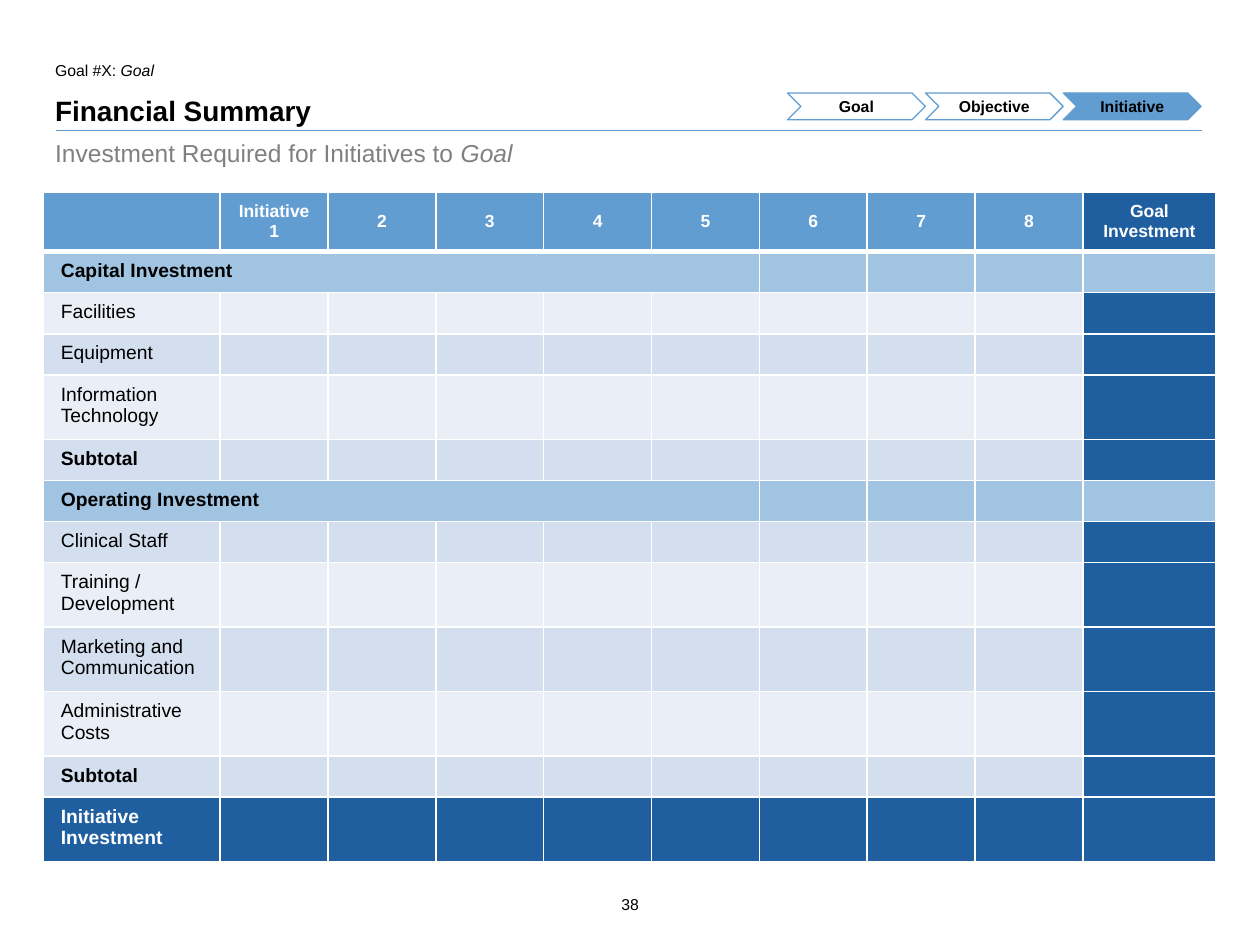
from dataclasses import dataclass

from lxml.etree import SubElement
from pptx import Presentation
from pptx.dml.color import RGBColor
from pptx.enum.shapes import MSO_CONNECTOR, MSO_SHAPE
from pptx.enum.text import MSO_ANCHOR, PP_ALIGN
from pptx.oxml.ns import qn
from pptx.util import Pt


@dataclass(frozen=True)
class Theme:
    font: str = "Arial"
    black: str = "000000"
    white: str = "FFFFFF"
    gray: str = "808080"
    rule: str = "5D9ACF"
    header: str = "629DD1"
    total: str = "1F5FA0"
    section: str = "A1C4E3"
    light_band: str = "EAEFF7"
    dark_band: str = "D3DFEE"
    small: float = 9
    table_header: float = 10
    table_body: float = 11
    subtitle: float = 14
    title: float = 16


theme = Theme()


def write(text_frame, parts, size, color, bold=False, align=PP_ALIGN.LEFT):
    """Fill one paragraph from parts; every second part is italic."""
    paragraph = text_frame.paragraphs[0]
    paragraph.alignment = align
    for index, part in enumerate(parts):
        run = paragraph.add_run()
        run.text = part
        run.font.name = theme.font
        run.font.size = Pt(size)
        run.font.color.rgb = RGBColor.from_string(color)
        run.font.bold = bold
        run.font.italic = index % 2 == 1


def set_borders(cell, widths):
    """Draw white borders; widths maps an edge tag to points."""
    properties = cell._tc.get_or_add_tcPr()
    for position, (edge, width) in enumerate(widths.items()):
        line = properties.makeelement(qn(f"a:{edge}"), {"w": str(Pt(width))})
        fill = SubElement(line, qn("a:solidFill"))
        SubElement(fill, qn("a:srgbClr"), val=theme.white)
        properties.insert(position, line)


presentation = Presentation()
presentation.slide_width = Pt(720)
presentation.slide_height = Pt(540)
slide = presentation.slides.add_slide(presentation.slide_layouts[6])

# Headings and page number
rule = slide.shapes.add_connector(MSO_CONNECTOR.STRAIGHT, Pt(32), Pt(74.6), Pt(687), Pt(74.6))
rule.line.color.rgb = RGBColor.from_string(theme.rule)
rule.line.width = Pt(0.75)
SubElement(rule._element.spPr, qn("a:effectLst"))

left, center = PP_ALIGN.LEFT, PP_ALIGN.CENTER
top, bottom = MSO_ANCHOR.TOP, MSO_ANCHOR.BOTTOM
texts = [
    (["Goal #X: ", "Goal"], (31.5, 31.7, 208, 14.4), theme.small, theme.black, False, left, top, 3),
    (["Financial Summary"], (31.5, 53.3, 654.5, 19.4), theme.title, theme.black, True, left, bottom, 0),
    (["Investment Required for Initiatives to ", "Goal"], (31.5, 75.6, 654.5, 21.6),
     theme.subtitle, theme.gray, False, left, top, 3),
    (["38"], (335.5, 508.3, 49, 18.7), theme.small, theme.black, False, center, top, 3),
]
for parts, box, size, color, bold, align, anchor, inset in texts:
    text_frame = slide.shapes.add_textbox(*map(Pt, box)).text_frame
    text_frame.word_wrap = True
    text_frame.vertical_anchor = anchor
    text_frame.margin_left = text_frame.margin_right = 0
    text_frame.margin_top = text_frame.margin_bottom = Pt(inset)
    write(text_frame, parts, size, color, bold, align)

# Breadcrumb
breadcrumb = ["Goal", "Objective", "Initiative"]
current_step = "Initiative"
for index, step in enumerate(breadcrumb):
    chevron = slide.shapes.add_shape(
        MSO_SHAPE.CHEVRON, Pt(450 + 78.8 * index), Pt(53.1), Pt(78.8), Pt(15.4))
    chevron.shadow.inherit = False
    chevron.line.color.rgb = RGBColor.from_string(theme.header)
    chevron.line.width = Pt(0.75)
    if step == current_step:
        chevron.fill.solid()
        chevron.fill.fore_color.rgb = RGBColor.from_string(theme.header)
    else:
        chevron.fill.background()
    text_frame = chevron.text_frame
    text_frame.margin_left = text_frame.margin_right = 0
    text_frame.margin_top = text_frame.margin_bottom = 0
    text_frame.vertical_anchor = MSO_ANCHOR.MIDDLE
    write(text_frame, [step], theme.small, theme.black, True, center)

# Investment table
headers = ["", "Initiative 1", *map(str, range(2, 9)), "Goal Investment"]
single, double = 23.5, 36.8
rows = [
    ("Capital Investment", single), ("Facilities", single), ("Equipment", single),
    ("Information Technology", double), ("Subtotal", single),
    ("Operating Investment", single), ("Clinical Staff", single),
    ("Training / Development", double), ("Marketing and Communication", double),
    ("Administrative Costs", double), ("Subtotal", single),
    ("Initiative Investment", double),
]
sections = {"Capital Investment", "Operating Investment"}
bold_rows = sections | {"Subtotal", "Initiative Investment"}
column_widths = [101] + [61.65] * 8 + [76]
row_heights = [34.2] + [height for label, height in rows]
last_column = len(headers) - 1

table = slide.shapes.add_table(
    len(row_heights), len(headers), Pt(24.8), Pt(109.6),
    Pt(sum(column_widths)), Pt(sum(row_heights))).table
table.first_row = table.horz_banding = False
for column, width in zip(table.columns, column_widths):
    column.width = Pt(width)
for row, height in zip(table.rows, row_heights):
    row.height = Pt(height)

grid = [headers] + [[label] + [""] * last_column for label, height in rows]
for row_index, labels in enumerate(grid):
    is_header = row_index == 0
    row_name = labels[0]
    is_total = row_name == "Initiative Investment"
    for column_index, label in enumerate(labels):
        cell = table.cell(row_index, column_index)
        if row_name in sections:
            fill = theme.section
        elif is_total or column_index == last_column:
            fill = theme.total
        elif is_header:
            fill = theme.header
        else:
            fill = theme.dark_band if row_index % 2 else theme.light_band
        cell.fill.solid()
        cell.fill.fore_color.rgb = RGBColor.from_string(fill)
        set_borders(cell, {"lnL": 1, "lnR": 1, "lnT": 3 if row_index == 1 else 1,
                           "lnB": 3 if is_header else 1})
        cell.margin_left = cell.margin_right = Pt(10)
        cell.margin_top = cell.margin_bottom = Pt(5)
        size = theme.table_header if is_header else theme.table_body
        if label:
            cell.vertical_anchor = MSO_ANCHOR.MIDDLE if is_header else top
            write(cell.text_frame, [label], size,
                  theme.white if is_header or is_total else theme.black,
                  is_header or label in bold_rows, center if is_header else left)
        else:
            # Empty cells need a small type size so that they do not stretch the row
            SubElement(cell.text_frame.paragraphs[0]._p, qn("a:endParaRPr"), sz=str(size * 100))
    if row_name in sections:
        table.cell(row_index, 0).merge(table.cell(row_index, 5))

presentation.save("out.pptx")
